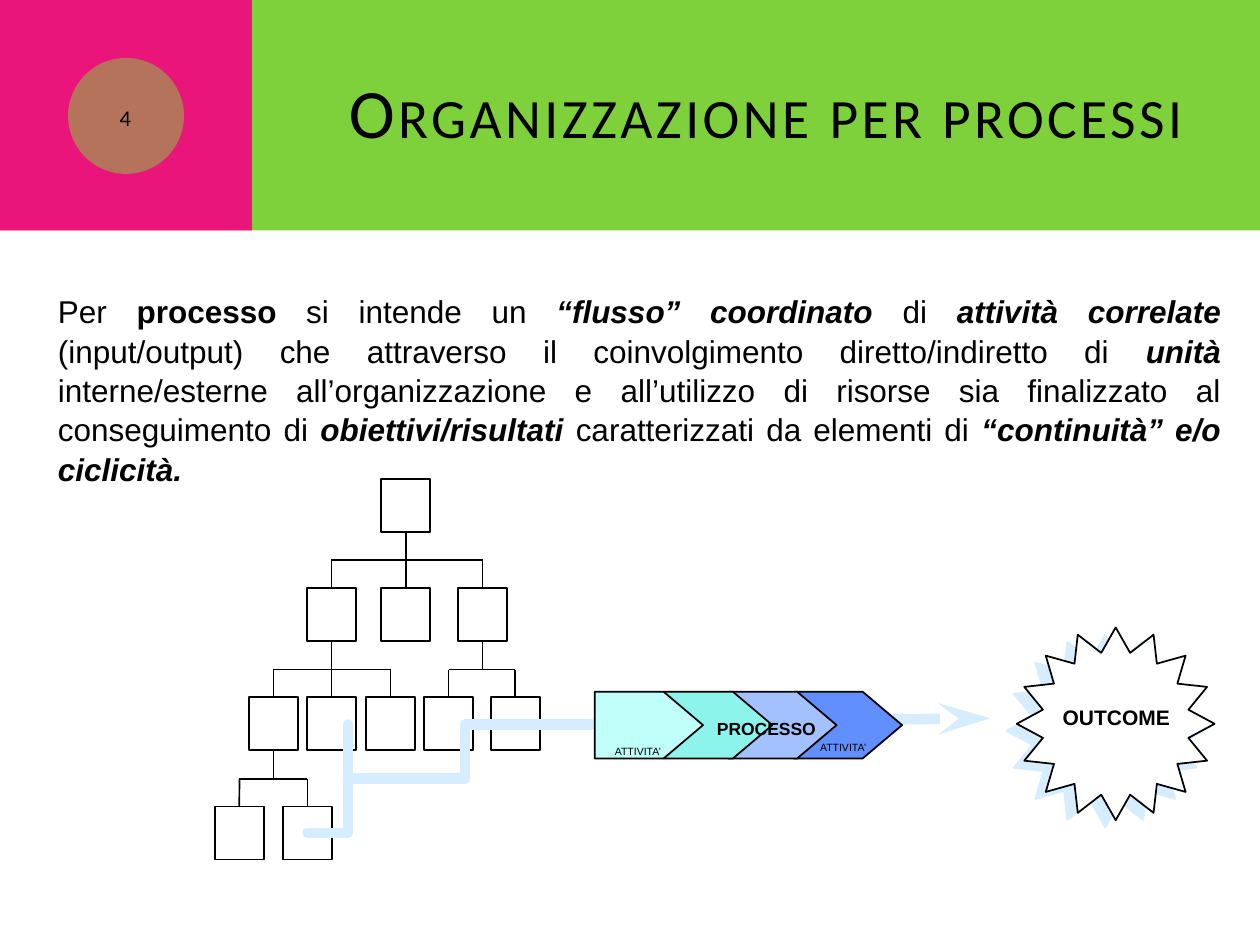
from dataclasses import dataclass

from lxml import etree
from pptx import Presentation
from pptx import util as u
from pptx.dml.color import RGBColor
from pptx.enum import shapes, text
from pptx.oxml import ns

BLACK, WHITE, GREEN, PINK, PALE = "000000", "FFFFFF", "7FD13B", "EA157A", "D6ECFF"
SHAPE, ALIGN = shapes.MSO_SHAPE, text.PP_ALIGN
BOX_W, BOX_H = 0.39, 0.42
ROW_TOP, ROW_PITCH, BAR_GAP = 3.8, 0.867, 0.22


@dataclass
class Unit:
    """A box of the organisation chart: centre and subordinate units."""
    center: float
    children: tuple = ()


@dataclass
class Span:
    words: str
    bold: bool = False
    italic: bool = False


def color(value: str) -> RGBColor:
    return RGBColor.from_string(value)


def add_xml(parent, tag: str, **attributes):
    child = etree.SubElement(parent, ns.qn(tag))
    for key, value in attributes.items():
        child.set(key, str(value))
    return child


def add_box(page, kind, left, top, width, height, fill, line=None):
    box = page.shapes.add_shape(kind, *map(u.Inches, (left, top, width, height)))
    box.shadow.inherit = False
    box.fill.solid()
    box.fill.fore_color.rgb = color(fill)
    if line:
        box.line.color.rgb = color(line)
        box.line.width = u.Pt(1)
    else:
        box.line.fill.background()
    return box


def add_line(page, start, end, stroke=BLACK, weight=1.0, above=None, below=None):
    line = page.shapes.add_connector(
        shapes.MSO_CONNECTOR.STRAIGHT, *map(u.Inches, (*start, *end)))
    line.line.color.rgb = color(stroke)
    line.line.width = u.Pt(weight)
    if above:
        line.begin_connect(above, 2)
    if below:
        line.end_connect(below, 0)
    add_xml(line._element.spPr, "a:effectLst")
    return line


def add_text(page, spans, left, top, width, height, *, size, font="Arial", align=ALIGN.LEFT,
             anchor=text.MSO_ANCHOR.TOP, inset=(0.1, 0.05), wrap=True, spacing=None,
             small_caps=False, tracking=0):
    box = page.shapes.add_textbox(*map(u.Inches, (left, top, width, height)))
    frame = box.text_frame
    frame.word_wrap = wrap
    frame.vertical_anchor = anchor
    frame.margin_left = frame.margin_right = u.Inches(inset[0])
    frame.margin_top = frame.margin_bottom = u.Inches(inset[1])
    para = frame.paragraphs[0]
    para.alignment = align
    if spacing:
        para.line_spacing = spacing
    for span in spans:
        run = para.add_run()
        run.text = span.words
        run.font.name, run.font.size = font, u.Pt(size)
        run.font.bold, run.font.italic = span.bold, span.italic
        run.font.color.rgb = color(BLACK)
        if small_caps:
            run.font._element.set("cap", "small")
        if tracking:
            run.font._element.set("spc", str(tracking * 100))


def add_unit(page, unit: Unit, level: int = 0):
    """Draw a unit, its subordinates and the lines between them."""
    top = ROW_TOP + level * ROW_PITCH
    box = add_box(page, SHAPE.RECTANGLE, unit.center - BOX_W / 2, top, BOX_W, BOX_H, WHITE, BLACK)
    if unit.children:
        bar = top + ROW_PITCH - BAR_GAP
        add_line(page, (unit.center, top + BOX_H), (unit.center, bar), above=box)
        add_line(page, (unit.children[0].center, bar), (unit.children[-1].center, bar))
        for child in unit.children:
            child_box = add_unit(page, child, level + 1)
            add_line(page, (child.center, bar), (child.center, top + ROW_PITCH), below=child_box)
    return box


def add_flow(page, points):
    """Draw a thick open line with round ends and corners."""
    corners = [(u.Inches(x), u.Inches(y)) for x, y in points]
    builder = page.shapes.build_freeform(*corners[0])
    builder.add_line_segments(corners[1:], close=False)
    flow = builder.convert_to_shape()
    flow.shadow.inherit = False
    flow.fill.background()
    flow.line.color.rgb = color(PALE)
    flow.line.width = u.Pt(6)
    stroke = flow.line._get_or_add_ln()
    stroke.set("cap", "rnd")
    add_xml(stroke, "a:round")


def main():
    deck = Presentation()
    deck.slide_width, deck.slide_height = u.Inches(10), u.Inches(7.5)
    page = deck.slides.add_slide(deck.slide_layouts[6])

    # Header band, title and page number
    add_box(page, SHAPE.RECTANGLE, 0, 0, 10, 1.83, GREEN)
    add_box(page, SHAPE.RECTANGLE, 0, 0, 2, 1.83, PINK)
    badge = add_box(page, SHAPE.OVAL, 0.54, 0.46, 0.92, 0.92, GREEN)
    badge_color = badge._element.spPr.find(ns.qn("a:solidFill"))[0]
    add_xml(badge_color, "a:alpha", val=50000)
    middle = text.MSO_ANCHOR.MIDDLE
    add_text(page, [Span("Organizzazione per processi")], 2.67, 0.25, 6.83, 1.25, size=39.6,
             font="Calibri", align=ALIGN.RIGHT, anchor=middle, small_caps=True, tracking=2)
    add_text(page, [Span("4")], 0.58, 0.58, 0.83, 0.67, size=16, font="Calibri",
             align=ALIGN.CENTER, anchor=middle, small_caps=True)

    # Definition
    definition = [
        Span("Per "), Span("processo", True), Span(" si intende un "),
        Span("“flusso” coordinato ", True, True), Span("di "),
        Span("attività correlate ", True, True),
        Span("(input/output) che attraverso il coinvolgimento diretto/indiretto di "),
        Span("unità", True, True),
        Span(" interne/esterne all’organizzazione e all’utilizzo di risorse sia finalizzato "
             "al conseguimento di "),
        Span("obiettivi/risultati ", True, True), Span("caratterizzati da elementi di "),
        Span("“continuità” e/o ciclicità.", True, True),
    ]
    add_text(page, definition, 0.35, 2.25, 9.45, 1.63, size=18, align=ALIGN.JUSTIFY,
             inset=(0.11, 0.06), spacing=1.04)

    # Organisation chart
    office = Unit(2.17, (Unit(1.9), Unit(2.44)))
    left_branch = Unit(2.63, (office, Unit(2.63), Unit(3.1)))
    right_branch = Unit(3.83, (Unit(3.56), Unit(4.09)))
    add_unit(page, Unit(3.22, (left_branch, Unit(3.22), right_branch)))

    # Process flow across the units
    add_flow(page, [(2.44, 6.61), (2.76, 6.61), (2.76, 5.75)])
    add_flow(page, [(2.76, 6.18), (3.69, 6.18), (3.69, 5.75), (4.69, 5.75)])
    arrow = add_line(page, (4.71, 5.74), (7.86, 5.7), PALE, 6)
    add_xml(arrow.line._get_or_add_ln(), "a:tailEnd", type="stealth", w="med", len="lg")

    # Outcome star with an offset shadow
    star = add_box(page, SHAPE.STAR_16_POINT, 8.07, 4.98, 1.57, 1.53, WHITE, BLACK)
    star.adjustments[0] = 0.375
    effects = star._element.spPr.find(ns.qn("a:effectLst"))
    shadow = add_xml(effects, "a:outerShdw", dist=u.Pt(7.2), dir=146 * 60000,
                     algn="ctr", rotWithShape=0)
    add_xml(shadow, "a:srgbClr", val=PALE)
    add_text(page, [Span("OUTCOME", True)], 8.31, 5.56, 1.1, 0.27, size=12,
             align=ALIGN.CENTER, inset=(0.06, 0.03))

    # Activities, overlapping from right to left
    for left, fill in ((6.3, "618FFD"), (5.78, "A2C1FE"), (5.27, "8CF4EA"), (4.72, "C0FEF9")):
        step = add_box(page, SHAPE.PENTAGON, left, 5.49, 0.86, 0.53, fill, BLACK)
        step.adjustments[0] = 0.59
    tight = (0.05, 0.03)
    add_text(page, [Span("ATTIVITA’")], 4.83, 5.88, 0.49, 0.16, size=6, inset=tight, wrap=False)
    add_text(page, [Span("PROCESSO", True)], 5.64, 5.67, 0.89, 0.22, size=10, inset=tight,
             wrap=False)
    add_text(page, [Span("ATTIVITA’")], 6.41, 5.83, 0.61, 0.2, size=6, wrap=False)

    deck.save("out.pptx")


if __name__ == "__main__":
    main()
